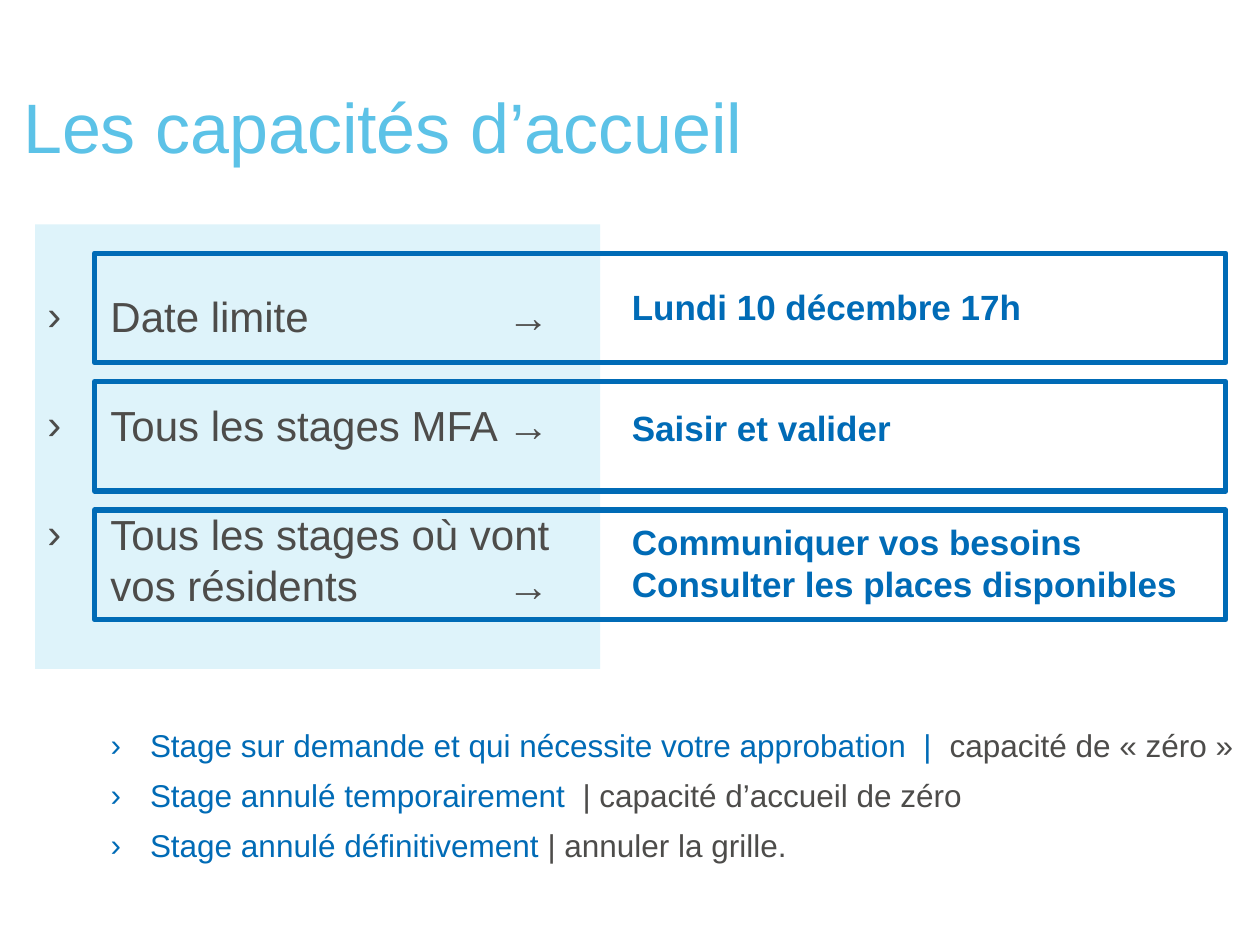
from pptx import Presentation
from pptx.dml.color import RGBColor
from pptx.enum.shapes import MSO_SHAPE
from pptx.enum.text import MSO_ANCHOR, MSO_AUTO_SIZE, PP_ALIGN
from pptx.oxml.ns import qn
from pptx.util import Pt
from lxml import etree

SKY = RGBColor(0x5C, 0xC2, 0xE7)
PALE = RGBColor(0xDE, 0xF3, 0xFA)
BLUE = RGBColor(0x00, 0x6B, 0xB6)
GREY = RGBColor(0x4D, 0x4C, 0x4A)

LINE = 29.1       # line height of the step list
STEP_GAP = 33.2   # space between two steps
FRAME_PITCH = 73.4

STEPS = ["Date limite", "Tous les stages MFA", "Tous les stages où vont vos résidents"]
STEP_LAST_LINES = [0, 1, 3]  # gaps and wrapped lines are resolved in add_steps
ANSWERS = [  # row, offset from the top of its frame, text
    (0, 15.1, "Lundi 10 décembre 17h"),
    (1, 10.8, "Saisir et valider"),
    (2, 2.2, "Communiquer vos besoins"),
    (2, 26.6, "Consulter les places disponibles"),
]
NOTES = [
    ("Stage sur demande et qui nécessite votre approbation  |  ", "capacité de « zéro »"),
    ("Stage annulé temporairement  ", "| capacité d’accueil de zéro"),
    ("Stage annulé définitivement ", "| annuler la grille."),
]


def add_text(paragraph, text, size=24, color=GREY, bold=False):
    run = paragraph.add_run()
    run.text = text
    run.font.name = "Arial"
    run.font.size = Pt(size)
    run.font.bold = bold
    run.font.color.rgb = color


def format_paragraph(paragraph, before=0, line=1.0, indent=0):
    paragraph.alignment = PP_ALIGN.LEFT
    paragraph.space_before = Pt(before)
    paragraph.space_after = Pt(0)
    paragraph.line_spacing = line
    if indent:
        properties = paragraph._p.get_or_add_pPr()
        properties.set("marL", str(Pt(indent)))
        properties.set("indent", str(-Pt(indent)))
        etree.SubElement(properties, qn("a:buFont")).set("typeface", "Arial")
        etree.SubElement(properties, qn("a:buChar")).set("char", "›")


def set_frame(frame, anchor=MSO_ANCHOR.TOP, wrap=True, insets=(7.2, 3.6, 7.2, 3.6)):
    frame.word_wrap = wrap
    frame.auto_size = MSO_AUTO_SIZE.NONE
    frame.vertical_anchor = anchor
    frame.margin_left, frame.margin_top, frame.margin_right, frame.margin_bottom = map(Pt, insets)


def place(shape, left, top, width, height):
    shape.left, shape.top, shape.width, shape.height = map(Pt, (left, top, width, height))


def add_rectangle(slide, box, fill=None, line=None):
    shape = slide.shapes.add_shape(MSO_SHAPE.RECTANGLE, *map(Pt, box))
    shape.shadow.inherit = False
    if fill is None:
        shape.fill.background()
    else:
        shape.fill.solid()
        shape.fill.fore_color.rgb = fill
    if line is None:
        shape.line.fill.background()
    else:
        shape.line.color.rgb = line
        shape.line.width = Pt(3)
    return shape


def add_title(slide, box):
    title = slide.shapes.title
    place(title, *box)
    set_frame(title.text_frame, anchor=MSO_ANCHOR.BOTTOM)
    paragraph = title.text_frame.paragraphs[0]
    format_paragraph(paragraph)
    add_text(paragraph, "Les capacités d’accueil", size=40, color=SKY)


def add_steps(slide, box):
    left, top, width, height = box
    inset = 37.5
    panel = add_rectangle(slide, box, fill=PALE)
    frame = panel.text_frame
    set_frame(frame, insets=(7.2, inset, 7.2, 3.6))
    for index, text in enumerate(STEPS):
        paragraph = frame.paragraphs[0] if index == 0 else frame.add_paragraph()
        format_paragraph(paragraph, STEP_GAP if index else 0, Pt(LINE), indent=36)
        add_text(paragraph, text)

    # Arrows in one column; the last step wraps onto a second line
    for index in range(len(STEPS)):
        wrapped = LINE if index == len(STEPS) - 1 else 0
        arrow_top = top + inset + index * (LINE + STEP_GAP) + wrapped
        arrow = slide.shapes.add_textbox(Pt(left + 270), Pt(arrow_top), Pt(30), Pt(LINE))
        set_frame(arrow.text_frame, wrap=False, insets=(0, 0, 0, 0))
        paragraph = arrow.text_frame.paragraphs[0]
        format_paragraph(paragraph, line=Pt(LINE))
        add_text(paragraph, "→")


def add_answers(slide, box):
    left, top, width, height = box
    for row in range(len(STEPS)):
        add_rectangle(slide, (left, top + row * FRAME_PITCH, width, height), line=BLUE)
    for row, offset, text in ANSWERS:
        answer_top = top + row * FRAME_PITCH + offset
        label = slide.shapes.add_textbox(Pt(left + 300), Pt(answer_top), Pt(330), Pt(31.5))
        set_frame(label.text_frame, wrap=False)
        paragraph = label.text_frame.paragraphs[0]
        format_paragraph(paragraph)
        add_text(paragraph, text, size=20, color=BLUE, bold=True)


def add_notes_list(slide, box):
    body = slide.placeholders[1]
    place(body, *box)
    frame = body.text_frame
    set_frame(frame, insets=(7.2, 5.3, 7.2, 3.6))
    for index, (case, action) in enumerate(NOTES):
        paragraph = frame.paragraphs[0] if index == 0 else frame.add_paragraph()
        format_paragraph(paragraph, 7 if index else 0, indent=22.5)
        add_text(paragraph, case, size=18, color=BLUE)
        add_text(paragraph, action, size=18)


def main():
    presentation = Presentation()
    presentation.slide_width, presentation.slide_height = Pt(720), Pt(540)
    slide = presentation.slides.add_slide(presentation.slide_layouts[1])
    add_title(slide, (6, 44, 696, 55.5))
    add_steps(slide, (20, 128.2, 323, 254))
    add_answers(slide, (54, 144.7, 646.5, 62.6))
    add_notes_list(slide, (56, 409.7, 666, 85))
    presentation.save("out.pptx")


if __name__ == "__main__":
    main()
